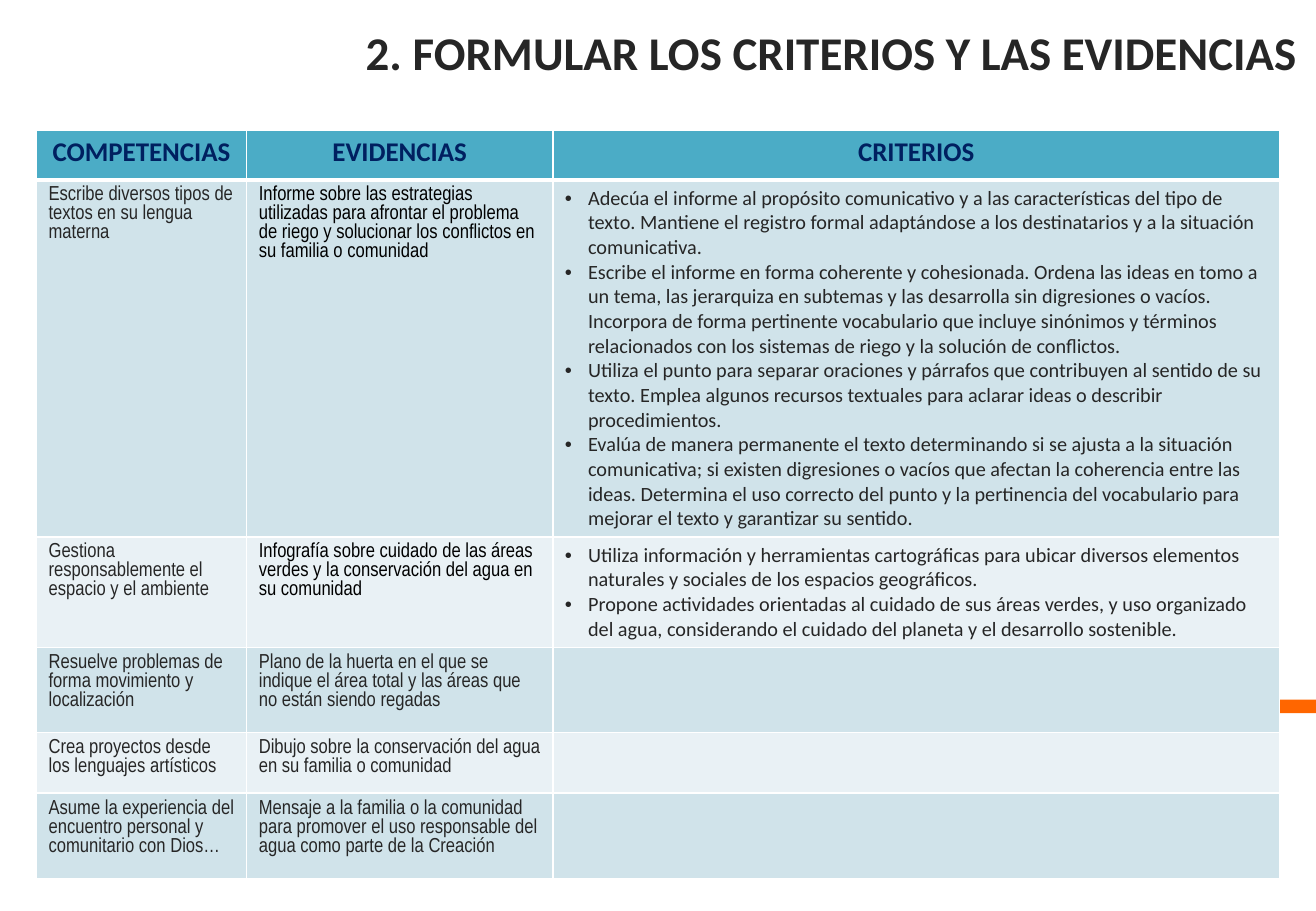
from lxml import etree
from pptx import Presentation, util as u
from pptx.dml.color import RGBColor
from pptx.enum import shapes, text
from pptx.oxml import ns

SLIDE_W, SLIDE_H = u.Inches(10.83), u.Inches(7.5)
COLUMNS = [1.73, 2.52, 5.98]
ROWS = [0.41, 2.94, 0.91, 0.57, 0.41, 0.57]
INK = RGBColor(0x26, 0x26, 0x26)
BLACK = RGBColor(0, 0, 0)
NAVY = RGBColor(0x00, 0x20, 0x60)
TEAL = RGBColor(0x4B, 0xAC, 0xC6)
BANDS = [RGBColor(0xD0, 0xE3, 0xEA), RGBColor(0xE9, 0xF1, 0xF5)]
WHITE = RGBColor(0xFF, 0xFF, 0xFF)
ORANGE = RGBColor(0xFF, 0x66, 0x00)

HEADINGS = ["COMPETENCIAS", "EVIDENCIAS", "CRITERIOS"]
PLAN = [
    ("Escribe diversos tipos de textos en su lengua materna",
     "Informe sobre las estrategias utilizadas para afrontar el problema de riego y "
     "solucionar los conflictos en su familia o comunidad",
     ["Adecúa el informe al propósito comunicativo y a las características del tipo de texto. "
      "Mantiene el registro formal adaptándose a los destinatarios y a la situación comunicativa.",
      "Escribe el informe en forma coherente y cohesionada. Ordena las ideas en tomo a un tema, "
      "las jerarquiza en subtemas y las desarrolla sin digresiones o vacíos. Incorpora de forma "
      "pertinente vocabulario que incluye sinónimos y términos relacionados con los sistemas de "
      "riego y la solución de conflictos.",
      "Utiliza el punto para separar oraciones y párrafos que contribuyen al sentido de su texto. "
      "Emplea algunos recursos textuales para aclarar ideas o describir procedimientos.",
      "Evalúa de manera permanente el texto determinando si se ajusta a la situación comunicativa; "
      "si existen digresiones o vacíos que afectan la coherencia entre las ideas. Determina el uso "
      "correcto del punto y la pertinencia del vocabulario para mejorar el texto y garantizar su "
      "sentido."]),
    ("Gestiona responsablemente el espacio y el ambiente",
     "Infografía sobre cuidado de las áreas verdes y la conservación del agua en su comunidad",
     ["Utiliza información y herramientas cartográficas para ubicar diversos elementos naturales "
      "y sociales de los espacios geográficos.",
      "Propone actividades orientadas al cuidado de sus áreas verdes, y uso organizado del agua, "
      "considerando el cuidado del planeta y el desarrollo sostenible."]),
    ("Resuelve problemas de forma movimiento y localización",
     "Plano de la huerta en el que se indique el área total y las áreas que no están siendo regadas",
     []),
    ("Crea proyectos desde los lenguajes artísticos",
     "Dibujo sobre la conservación del agua en su familia o comunidad",
     []),
    ("Asume la experiencia del encuentro personal y comunitario con Dios…",
     "Mensaje a la familia o la comunidad para promover el uso responsable del agua como parte "
     "de la Creación",
     []),
]


def write(paragraph, words, size, font, color, bold=False, align=None):
    paragraph.alignment = align
    run = paragraph.add_run()
    run.text = words
    run.font.size, run.font.name, run.font.bold = u.Pt(size), font, bold
    run.font.color.rgb = color


def add_bullet(paragraph):
    properties = paragraph._p.get_or_add_pPr()
    properties.set("marL", str(u.Inches(0.19)))
    properties.set("indent", str(u.Inches(-0.19)))
    etree.SubElement(properties, ns.qn("a:buFont")).set("typeface", "Arial")
    etree.SubElement(properties, ns.qn("a:buChar")).set("char", "•")


def paint_cell(cell, fill, top=1, bottom=1):
    properties = cell._tc.get_or_add_tcPr()
    for side, width in (("L", 1), ("R", 1), ("T", top), ("B", bottom)):
        line = etree.SubElement(properties, ns.qn(f"a:ln{side}"), w=str(u.Pt(width)))
        solid = etree.SubElement(line, ns.qn("a:solidFill"))
        etree.SubElement(solid, ns.qn("a:srgbClr"), val=str(WHITE))
    cell.fill.solid()
    cell.fill.fore_color.rgb = fill


def add_accent(slide):
    accent = slide.shapes.add_shape(
        shapes.MSO_SHAPE.RECTANGLE, int(SLIDE_W * 0.95), int(SLIDE_H * 0.768),
        int(SLIDE_W * 0.05), int(SLIDE_H * 0.015))
    accent.shadow.inherit = False
    accent.fill.solid()
    accent.fill.fore_color.rgb = ORANGE
    accent.line.fill.background()


def add_title(slide, words):
    title = slide.shapes.add_textbox(
        int(SLIDE_W * 0.26), u.Inches(0.01), int(SLIDE_W * 0.735), int(SLIDE_H * 0.112))
    frame = title.text_frame
    frame.word_wrap = True
    frame.vertical_anchor = text.MSO_ANCHOR.MIDDLE
    write(frame.paragraphs[0], words, 27.8, "Calibri", INK, True, text.PP_ALIGN.RIGHT)


def add_criteria(cell, criteria):
    frame = cell.text_frame
    for index, criterion in enumerate(criteria):
        paragraph = frame.add_paragraph() if index else frame.paragraphs[0]
        add_bullet(paragraph)
        write(paragraph, criterion, 12, "Calibri", INK)


def add_plan(slide):
    table = slide.shapes.add_table(
        len(ROWS), len(COLUMNS), u.Inches(0.3), u.Inches(1.07),
        u.Inches(sum(COLUMNS)), u.Inches(sum(ROWS))).table
    for column, width in zip(table.columns, COLUMNS):
        column.width = u.Inches(width)
    for row, height in zip(table.rows, ROWS):
        row.height = u.Inches(height)
    for index, heading in enumerate(HEADINGS):
        cell = table.cell(0, index)
        paint_cell(cell, TEAL, bottom=3)
        write(cell.text_frame.paragraphs[0], heading, 16, "Calibri", NAVY, True,
              text.PP_ALIGN.CENTER)
    for number, (competence, evidence, criteria) in enumerate(PLAN, 1):
        cells = table.rows[number].cells
        for cell in cells:
            paint_cell(cell, BANDS[(number - 1) % 2], top=3 if number == 1 else 1)
        evidence_color = BLACK if criteria else INK
        for cell, words, color in zip(cells, (competence, evidence), (INK, evidence_color)):
            write(cell.text_frame.paragraphs[0], words, 12, "Arial Narrow", color)
        add_criteria(cells[2], criteria)


def main():
    deck = Presentation()
    deck.slide_width, deck.slide_height = SLIDE_W, SLIDE_H
    slide = deck.slides.add_slide(deck.slide_layouts[6])
    add_accent(slide)
    add_title(slide, "2. FORMULAR LOS CRITERIOS Y LAS EVIDENCIAS")
    add_plan(slide)
    deck.save("out.pptx")


if __name__ == "__main__":
    main()
